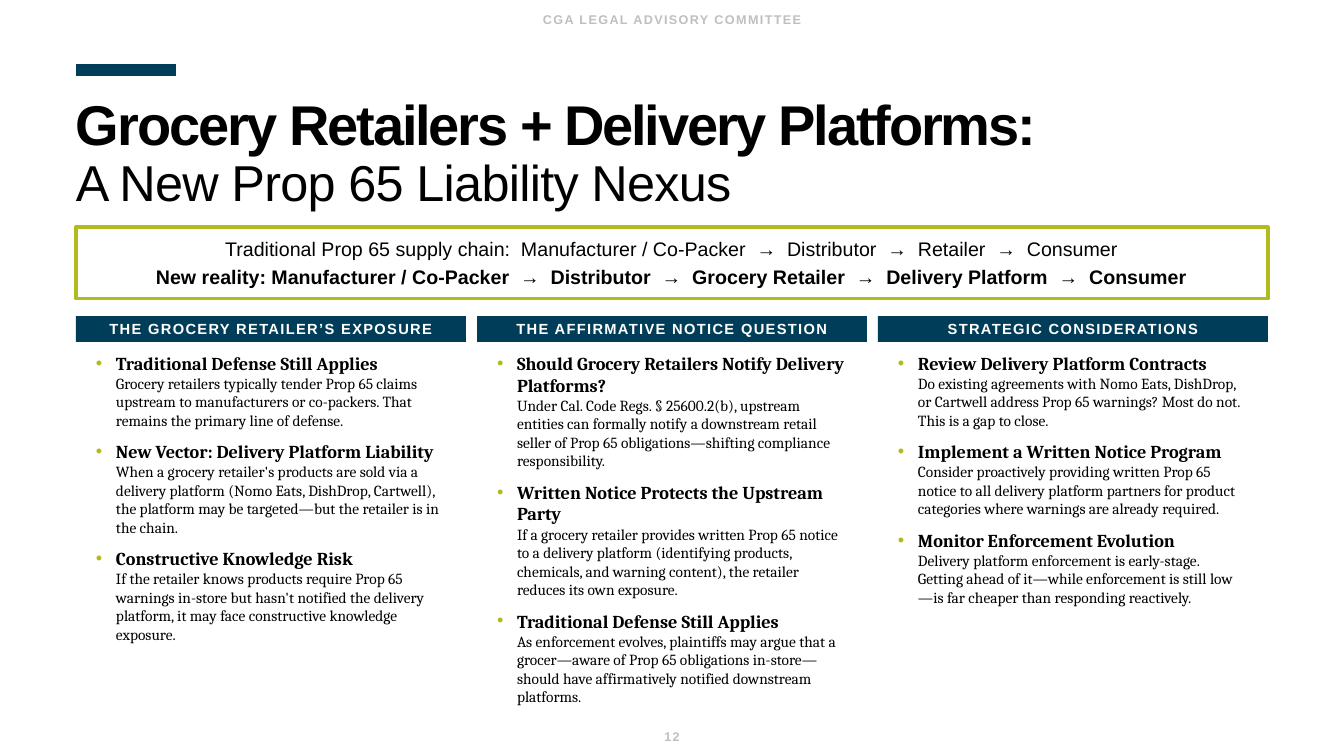
from copy import deepcopy
from lxml.etree import SubElement
from pptx import Presentation
from pptx.dml.color import RGBColor
from pptx.enum.shapes import MSO_CONNECTOR as Wire, MSO_SHAPE as Form
from pptx.enum.text import MSO_ANCHOR as Anchor, MSO_AUTO_SIZE as Fit, PP_ALIGN as Align
from pptx.oxml.ns import qn
from pptx.util import Emu, Pt

NAVY, LIME, GRAY, BLACK, WHITE = "003D58", "B2BB1E", "BFBFBF", "000000", "FFFFFF"
LEFT, WIDE, STEP, SPAN = 76, 1192, 401, 390


def px(count):
    return Emu(round(count * 914400 / 100.8))


def tint(code):
    return RGBColor.from_string(code)


class Deck:
    sans, serif = "Arial", "Cambria"

    def __init__(self, wide, high):
        self.show = Presentation()
        self.show.slide_width, self.show.slide_height = px(wide), px(high)
        self.slide = self.show.slides.add_slide(self.show.slide_layouts[4])
        self.holders = list(self.slide.placeholders)

    def place(self, shape, box):
        shape.left, shape.top, shape.width, shape.height = map(px, box)

    def frame(self, shape, insets, anchor=Anchor.TOP):
        body = shape.text_frame
        body.word_wrap, body.auto_size = True, Fit.NONE
        body.vertical_anchor = anchor
        (body.margin_left, body.margin_top,
         body.margin_right, body.margin_bottom) = map(px, insets)
        return body

    def style(self, run, size, color, bold=False, face=sans, gap=0):
        font = run.font
        font.name, font.size, font.bold = face, Pt(size), bold
        font.color.rgb = tint(color)
        if gap:
            run._r.get_or_add_rPr().set("spc", str(gap))

    def match_break(self, para):
        for mark in para._p.findall(qn("a:br")):
            mark.insert(0, deepcopy(para.runs[0]._r.rPr))

    def title(self, box, head, tail):
        shape = self.holders.pop(0)
        self.place(shape, box)
        body = self.frame(shape, (0, 20, 0, 0))
        body.text = f"{head}\v{tail}"
        para = body.paragraphs[0]
        para.alignment, para.line_spacing = Align.LEFT, 0.9
        self.style(para.runs[0], 40, BLACK, True, gap=-150)
        self.style(para.runs[1], 36, BLACK, gap=-50)
        self.match_break(para)

    def label(self, box, text):
        shape = self.slide.shapes.add_textbox(*map(px, box))
        body = self.frame(shape, (10, 5, 10, 5), Anchor.MIDDLE)
        self.center(body, text, 9, GRAY)

    def center(self, body, text, size, color):
        body.text = text
        para = body.paragraphs[0]
        para.alignment = Align.CENTER
        self.style(para.runs[0], size, color, True, gap=100)

    def rect(self, box, fill, edge=None):
        shape = self.slide.shapes.add_shape(Form.RECTANGLE, *map(px, box))
        shape.shadow.inherit = False
        shape.fill.solid()
        shape.fill.fore_color.rgb = tint(fill)
        if edge:
            shape.line.color.rgb = tint(edge)
            shape.line.width = Pt(2.25)
        else:
            shape.line.fill.background()
        return shape

    def banner(self, box, lines):
        body = self.frame(self.rect(box, WHITE, LIME), (0, 10, 0, 10))
        body.text = "\n".join(lines)
        for spot, para in enumerate(body.paragraphs):
            para.alignment = Align.CENTER
            para.space_before = Pt(3 if spot else 0)
            self.style(para.runs[0], 14, BLACK, spot > 0)

    def header(self, box, text):
        body = self.frame(self.rect(box, NAVY), (0, 0, 0, 0), Anchor.MIDDLE)
        self.center(body, text, 10.5, WHITE)

    def bullet(self, para):
        props = para._p.get_or_add_pPr()
        props.set("marL", str(px(20)))
        props.set("indent", str(-px(20)))
        SubElement(SubElement(props, qn("a:buClr")), qn("a:srgbClr")).set("val", LIME)
        SubElement(props, qn("a:buFont")).set("typeface", self.sans)
        SubElement(props, qn("a:buChar")).set("char", "•")

    def points(self, box, items):
        shape = self.holders.pop(0)
        self.place(shape, box)
        body = self.frame(shape, (20, 10, 20, 10))
        for spot, (head, note) in enumerate(items):
            para = body.add_paragraph() if spot else body.paragraphs[0]
            para.text = f"{head}\v{note}"
            self.bullet(para)
            para.alignment = Align.LEFT
            para.space_before = Pt(8 if spot else 0)
            self.style(para.runs[0], 13, BLACK, True, self.serif)
            self.style(para.runs[1], 11, BLACK, face=self.serif)
            self.match_break(para)

    def line(self, start, end, color, width):
        wire = self.slide.shapes.add_connector(Wire.STRAIGHT, *map(px, start + end))
        wire.line.color.rgb = tint(color)
        wire.line.width = Pt(width)
        SubElement(wire._element.spPr, qn("a:effectLst"))

    def save(self):
        for shape in self.holders:
            shape._element.getparent().remove(shape._element)
        self.show.save("out.pptx")


COLUMNS = [
    ("THE GROCERY RETAILER’S EXPOSURE", [
        ("Traditional Defense Still Applies",
         "Grocery retailers typically tender Prop 65 claims upstream to manufacturers or "
         "co-packers. That remains the primary line of defense."),
        ("New Vector: Delivery Platform Liability",
         "When a grocery retailer's products are sold via a delivery platform (Nomo Eats, "
         "DishDrop, Cartwell), the platform may be targeted—but the retailer is in the chain."),
        ("Constructive Knowledge Risk",
         "If the retailer knows products require Prop 65 warnings in-store but hasn't notified "
         "the delivery platform, it may face constructive knowledge exposure."),
    ]),
    ("THE AFFIRMATIVE NOTICE QUESTION", [
        ("Should Grocery Retailers Notify Delivery Platforms?",
         "Under Cal. Code Regs. § 25600.2(b), upstream entities can formally notify a downstream "
         "retail seller of Prop 65 obligations—shifting compliance responsibility."),
        ("Written Notice Protects the Upstream Party",
         "If a grocery retailer provides written Prop 65 notice to a delivery platform "
         "(identifying products, chemicals, and warning content), the retailer reduces its "
         "own exposure."),
        ("Traditional Defense Still Applies",
         "As enforcement evolves, plaintiffs may argue that a grocer—aware of Prop 65 "
         "obligations in-store—should have affirmatively notified downstream platforms."),
    ]),
    ("STRATEGIC CONSIDERATIONS", [
        ("Review Delivery Platform Contracts",
         "Do existing agreements with Nomo Eats, DishDrop, or Cartwell address Prop 65 "
         "warnings? Most do not. This is a gap to close."),
        ("Implement a Written Notice Program",
         "Consider proactively providing written Prop 65 notice to all delivery platform "
         "partners for product categories where warnings are already required."),
        ("Monitor Enforcement Evolution",
         "Delivery platform enforcement is early-stage. Getting ahead of it—while enforcement "
         "is still low—is far cheaper than responding reactively."),
    ]),
]


def main():
    deck = Deck(1344, 756)
    deck.line((LEFT, 70), (LEFT + 100, 70), NAVY, 9)
    deck.title((LEFT, 77, WIDE, 150), "Grocery Retailers + Delivery Platforms:",
               "A New Prop 65 Liability Nexus")
    deck.label((0, 718, 1344, 38), "12")
    deck.label((0, 0, 1344, 38), "CGA LEGAL ADVISORY COMMITTEE")
    deck.banner((LEFT, 227, WIDE, 72), [
        "Traditional Prop 65 supply chain:  Manufacturer / Co-Packer  →  Distributor  →  "
        "Retailer  →  Consumer",
        "New reality: Manufacturer / Co-Packer  →  Distributor  →  Grocery Retailer  →  "
        "Delivery Platform  →  Consumer",
    ])
    for spot, (head, items) in enumerate(COLUMNS):
        left = LEFT + spot * STEP
        deck.points((left, 342, SPAN, 359), items)
        deck.header((left, 316, SPAN, 26), head)
    deck.save()


if __name__ == "__main__":
    main()
